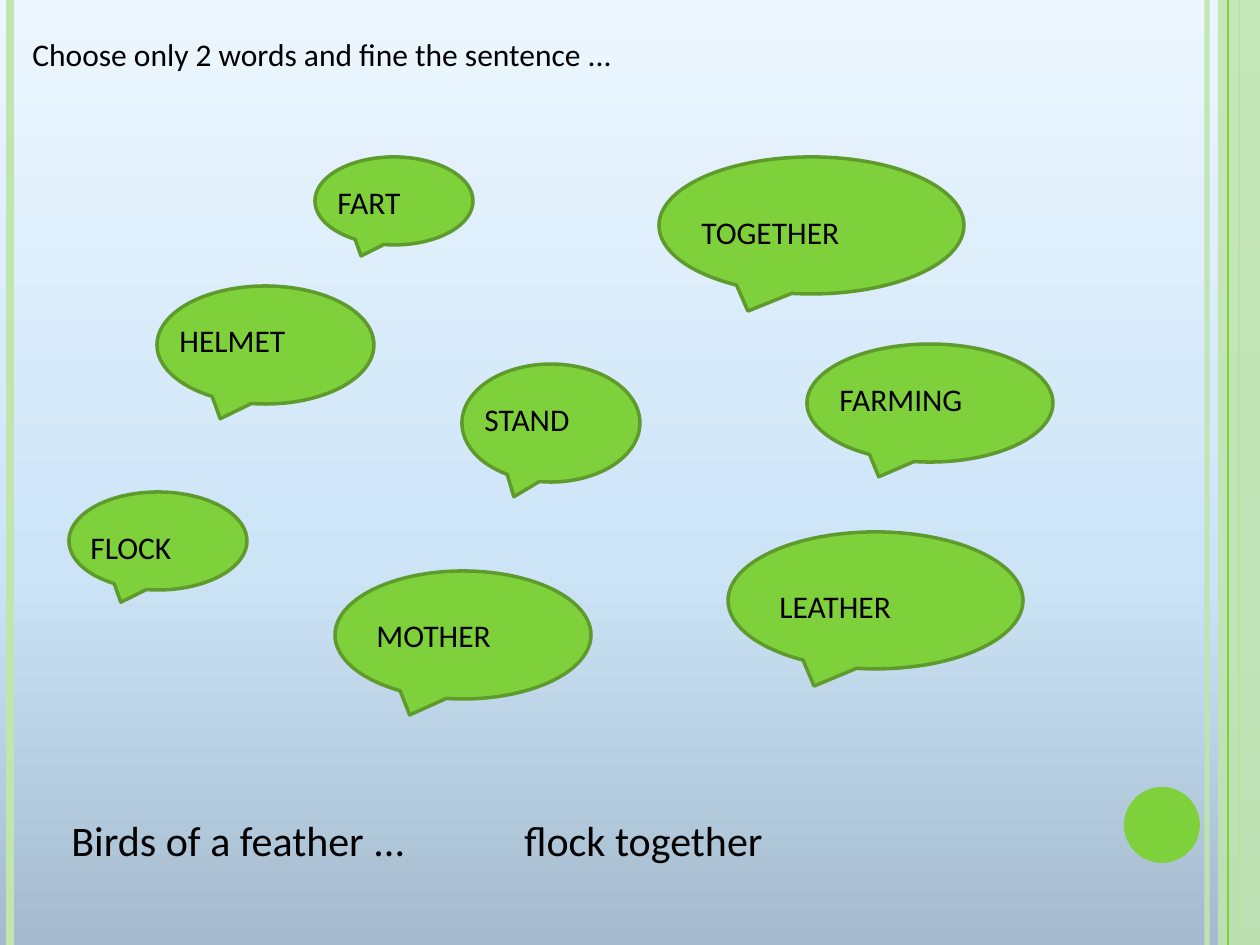
from copy import deepcopy
from dataclasses import dataclass

from lxml.etree import SubElement
from pptx import Presentation
from pptx.dml.color import RGBColor as RGB
from pptx.enum.shapes import MSO_CONNECTOR as CONN, MSO_SHAPE as SHAPE
from pptx.enum.text import MSO_AUTO_SIZE as AUTO
from pptx.oxml.ns import qn
from pptx.util import Emu, Pt

EMU_PER_PX = 914400 / 126
WIDTH, HEIGHT = 1260, 945


@dataclass(frozen=True)
class Theme:
    font: str = "Calibri"
    body: int = 18
    answer: int = 24
    ink: RGB = RGB(0x00, 0x00, 0x00)
    green: RGB = RGB(0x7F, 0xD1, 0x3B)
    pale: RGB = RGB(0xC0, 0xE5, 0xAF)
    outline: RGB = RGB(0x5E, 0x9B, 0x2C)
    sky: tuple = ((0.0, RGB(0xA5, 0xBB, 0xCD)),
                  (0.4, RGB(0xCD, 0xE4, 0xF7)),
                  (1.0, RGB(0xEC, 0xF6, 0xFF)))


@dataclass(frozen=True)
class Box:
    x: int
    y: int
    w: int
    h: int


@dataclass(frozen=True)
class Stripe:
    x: int
    color: RGB
    weight: float
    opacity: int = 100


@dataclass(frozen=True)
class Bubble:
    word: str
    oval: Box
    label: Box


@dataclass(frozen=True)
class Sentence:
    text: str
    box: Box
    size: int


THEME = Theme()
LABEL_H = 50

STRIPES = [
    Stripe(1207, THEME.pale, 3, 93),
    Stripe(10, THEME.pale, 4.5),
    Stripe(1239, THEME.green, 1.5),
]
PANEL_EDGE = Stripe(1228, THEME.green, 0.75)

BUBBLES = [
    Bubble("LEATHER", Box(728, 532, 295, 137), Box(767, 581, 364, LABEL_H)),
    Bubble("MOTHER", Box(335, 571, 256, 128), Box(364, 610, 305, LABEL_H)),
    Bubble("FLOCK", Box(69, 492, 178, 98), Box(78, 522, 295, LABEL_H)),
    Bubble("FARMING", Box(807, 344, 246, 118), Box(827, 374, 256, LABEL_H)),
    Bubble("STAND", Box(462, 364, 178, 118), Box(472, 394, 394, LABEL_H)),
    Bubble("HELMET", Box(157, 286, 217, 118), Box(167, 315, 295, LABEL_H)),
    Bubble("TOGETHER", Box(659, 157, 305, 137), Box(689, 207, 384, LABEL_H)),
    Bubble("FART", Box(315, 157, 158, 88), Box(325, 177, 168, LABEL_H)),
]

SENTENCES = [
    Sentence("Choose only 2 words and fine the sentence ...",
             Box(20, 29, 1191, LABEL_H), THEME.body),
    Sentence("Birds of a feather ...", Box(59, 808, 444, 102), THEME.answer),
    Sentence("flock together", Box(512, 808, 325, 63), THEME.answer),
]


def px(n: int) -> Emu:
    return Emu(round(n * EMU_PER_PX))


def place(box: Box) -> list[Emu]:
    return [px(n) for n in (box.x, box.y, box.w, box.h)]


def set_opacity(sp, percent: int) -> None:
    color = sp._element.spPr.find(".//" + qn("a:srgbClr"))
    SubElement(color, qn("a:alpha")).set("val", str(percent * 1000))


def paint_background(s) -> None:
    fill = s.background.fill
    fill.gradient()
    fill.gradient_angle = 90
    stops = s._element.find(".//" + qn("a:gsLst"))
    stops.insert(1, deepcopy(stops[0]))
    for stop, (position, color) in zip(fill.gradient_stops, THEME.sky):
        stop.position = position
        stop.color.rgb = color


def add_stripe(s, stripe: Stripe) -> None:
    line = s.shapes.add_connector(
        CONN.STRAIGHT, px(stripe.x), px(0), px(stripe.x), px(HEIGHT))
    line.line.color.rgb = stripe.color
    line.line.width = Pt(stripe.weight)
    if stripe.opacity < 100:
        set_opacity(line, stripe.opacity)
    SubElement(line._element.spPr, qn("a:effectLst"))


def add_filled(s, kind: SHAPE, box: Box, color: RGB):
    sp = s.shapes.add_shape(kind, *place(box))
    sp.shadow.inherit = False
    sp.fill.solid()
    sp.fill.fore_color.rgb = color
    sp.line.fill.background()
    return sp


def add_callout(s, box: Box) -> None:
    sp = add_filled(s, SHAPE.OVAL_CALLOUT, box, THEME.green)
    sp.line.color.rgb = THEME.outline
    sp.line.width = Pt(2)


def add_text(s, text: str, box: Box, size: int) -> None:
    tf = s.shapes.add_textbox(*place(box)).text_frame
    tf.word_wrap = True
    tf.auto_size = AUTO.SHAPE_TO_FIT_TEXT
    r = tf.paragraphs[0].add_run()
    r.text = text
    r.font.name = THEME.font
    r.font.size = Pt(size)
    r.font.color.rgb = THEME.ink


def main() -> None:
    prs = Presentation()
    prs.slide_width, prs.slide_height = px(WIDTH), px(HEIGHT)
    s = prs.slides.add_slide(prs.slide_layouts[6])

    # Background and side decoration
    paint_background(s)
    for stripe in STRIPES:
        add_stripe(s, stripe)
    panel = add_filled(s, SHAPE.RECTANGLE, Box(1218, 0, 42, HEIGHT), THEME.pale)
    set_opacity(panel, 87)
    add_stripe(s, PANEL_EDGE)
    add_filled(s, SHAPE.OVAL, Box(1124, 787, 76, 76), THEME.green)

    # Speech bubbles, then their words on top
    for bubble in BUBBLES:
        add_callout(s, bubble.oval)
    for bubble in BUBBLES:
        add_text(s, bubble.word, bubble.label, THEME.body)

    # Instruction and the finished sentence
    for sentence in SENTENCES:
        add_text(s, sentence.text, sentence.box, sentence.size)

    prs.save("out.pptx")


if __name__ == "__main__":
    main()
